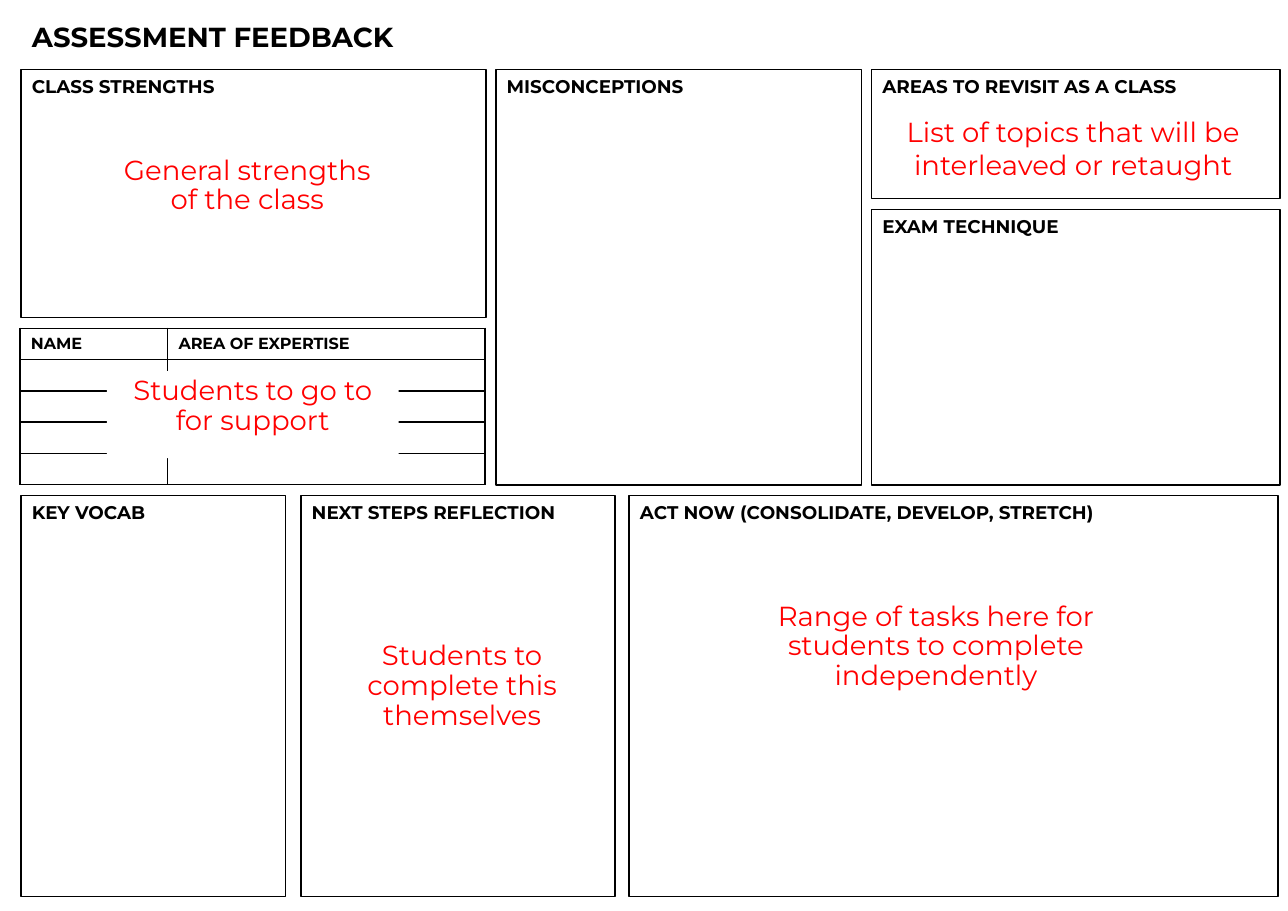
from dataclasses import dataclass

import lxml.etree
import pptx
import pptx.dml.color
import pptx.enum.shapes
import pptx.enum.text
import pptx.oxml.ns
import pptx.util

Pt = pptx.util.Pt
Align = pptx.enum.text.PP_ALIGN
Anchor = pptx.enum.text.MSO_ANCHOR


@dataclass(frozen=True)
class Theme:
    font: str = "Montserrat"
    ink: str = "000000"
    paper: str = "FFFFFF"
    prompt: str = "FF0000"
    title_size: float = 18
    heading_size: float = 12
    table_size: float = 10.5
    prompt_size: float = 18
    line_width: float = 1


@dataclass(frozen=True)
class Panel:
    heading: str
    left: float
    top: float
    width: float
    height: float


@dataclass(frozen=True)
class Prompt:
    text: str
    left: float
    top: float
    width: float
    height: float
    filled: bool = False
    line_spacing: float = 0.9
    space_before: float = 11
    inset_x: float = 7.2
    inset_y: float = 3.6


THEME = Theme()
LEFT, TOP, LOWER_TOP, LOWER_HEIGHT = 13.7, 45.5, 324, 262
MIDDLE_BOTTOM = 317
RIGHT_LEFT, RIGHT_WIDTH, EXAM_TOP = 569.5, 267, 136.8

PANELS = [
    Panel("CLASS STRENGTHS", LEFT, TOP, 303.8, 162.2),
    Panel("AREAS TO REVISIT AS A CLASS", RIGHT_LEFT, TOP, RIGHT_WIDTH, 84.2),
    Panel("MISCONCEPTIONS", 324, TOP, 239, MIDDLE_BOTTOM - TOP),
    Panel("EXAM TECHNIQUE", RIGHT_LEFT, EXAM_TOP, RIGHT_WIDTH, MIDDLE_BOTTOM - EXAM_TOP),
    Panel("KEY VOCAB", LEFT, LOWER_TOP, 172.8, LOWER_HEIGHT),
    Panel("NEXT STEPS REFLECTION", 196.6, LOWER_TOP, 205.2, LOWER_HEIGHT),
    Panel("ACT NOW (CONSOLIDATE, DEVELOP, STRETCH)", 411.1, LOWER_TOP, 424.1, LOWER_HEIGHT),
]
PROMPTS = [
    Prompt("Range of tasks here for students to complete independently", 486, 390.2, 251.3, 115.2),
    Prompt("List of topics that will be interleaved or retaught", 581.8, 70.6, 239, 33.8,
           line_spacing=1, space_before=3.6, inset_x=7.9, inset_y=4.3),
    Prompt("Students to complete this themselves", 206.6, 416.2, 190.8, 115.2),
    Prompt("Students to go to for support", 69.8, 242.6, 190.8, 56.9, filled=True),
    Prompt("General strengths of the class", 66.2, 98.6, 190.8, 56.9, filled=True),
]
EXPERT_HEADINGS = ("NAME", "AREA OF EXPERTISE")
EXPERT_COLUMNS = (96.5, 207.4)
EXPERT_ROWS, EXPERT_ROW_HEIGHT = 5, 20.45


def rgb(value: str) -> pptx.dml.color.RGBColor:
    return pptx.dml.color.RGBColor.from_string(value)


def write(frame, text: str, size: float, color: str, bold: bool = False,
          align=Align.LEFT, anchor=Anchor.TOP):
    """Put one styled paragraph into a text frame and return it."""
    frame.word_wrap = True
    frame.vertical_anchor = anchor
    para = frame.paragraphs[0]
    para.text = text
    para.alignment = align
    style(para.font, size, color, bold)
    return para


def style(font, size: float, color: str, bold: bool) -> None:
    font.name, font.size, font.bold = THEME.font, Pt(size), bold
    font.color.rgb = rgb(color)


def add_box(page, item, filled: bool, outlined: bool):
    """Draw a plain rectangle for a panel or a prompt."""
    box = page.shapes.add_shape(
        pptx.enum.shapes.MSO_SHAPE.RECTANGLE,
        Pt(item.left), Pt(item.top), Pt(item.width), Pt(item.height))
    box.shadow.inherit = False
    if filled:
        box.fill.solid()
        box.fill.fore_color.rgb = rgb(THEME.paper)
    else:
        box.fill.background()
    if outlined:
        box.line.color.rgb = rgb(THEME.ink)
        box.line.width = Pt(THEME.line_width)
    else:
        box.line.fill.background()
    return box


def add_title(page, text: str) -> None:
    title = page.shapes.title
    title.left, title.top, title.width, title.height = Pt(LEFT), Pt(9.4), Pt(821.5), Pt(28.8)
    write(title.text_frame, text, THEME.title_size, THEME.ink, bold=True)
    title.text_frame.auto_size = pptx.enum.text.MSO_AUTO_SIZE.NONE


def add_panel(page, panel: Panel) -> None:
    box = add_box(page, panel, filled=True, outlined=True)
    write(box.text_frame, panel.heading, THEME.heading_size, THEME.ink, bold=True)


def add_prompt(page, prompt: Prompt) -> None:
    box = add_box(page, prompt, prompt.filled, outlined=False)
    frame = box.text_frame
    frame.margin_left = frame.margin_right = Pt(prompt.inset_x)
    frame.margin_top = frame.margin_bottom = Pt(prompt.inset_y)
    para = write(frame, prompt.text, THEME.prompt_size, THEME.prompt, align=Align.CENTER)
    para.line_spacing = prompt.line_spacing
    para.space_before = Pt(prompt.space_before)


def add_borders(cell) -> None:
    """Outline all four sides; borders come before the fill in tcPr."""
    qn = pptx.oxml.ns.qn
    properties = cell._tc.get_or_add_tcPr()
    for position, side in enumerate(("lnL", "lnR", "lnT", "lnB")):
        line = lxml.etree.Element(qn(f"a:{side}"), w=str(Pt(THEME.line_width)))
        fill = lxml.etree.SubElement(line, qn("a:solidFill"))
        lxml.etree.SubElement(fill, qn("a:srgbClr"), val=THEME.ink)
        properties.insert(position, line)


def add_expert_table(page) -> None:
    table = page.shapes.add_table(
        EXPERT_ROWS, len(EXPERT_COLUMNS), Pt(13), Pt(214.6),
        Pt(sum(EXPERT_COLUMNS)), Pt(EXPERT_ROWS * EXPERT_ROW_HEIGHT)).table
    table.first_row = table.horz_banding = False
    for column, width in zip(table.columns, EXPERT_COLUMNS):
        column.width = Pt(width)
    for row in table.rows:
        row.height = Pt(EXPERT_ROW_HEIGHT)
    for cell in table.iter_cells():
        cell.fill.solid()
        cell.fill.fore_color.rgb = rgb(THEME.paper)
        add_borders(cell)
        # An empty paragraph takes its height from its end mark
        lxml.etree.SubElement(cell.text_frame.paragraphs[0]._p,
                              pptx.oxml.ns.qn("a:endParaRPr"),
                              sz=str(round(THEME.table_size * 100)))
    for column, heading in enumerate(EXPERT_HEADINGS):
        cell = table.cell(0, column)
        write(cell.text_frame, heading, THEME.table_size, THEME.ink, bold=True)


def main() -> None:
    deck = pptx.Presentation()
    deck.slide_width, deck.slide_height = Pt(841.68), Pt(595.44)
    page = deck.slides.add_slide(deck.slide_layouts[5])  # Title Only

    # Title and framed panels
    add_title(page, "ASSESSMENT FEEDBACK")
    for panel in PANELS:
        add_panel(page, panel)

    # Table of student experts
    add_expert_table(page)

    # Red guidance on top
    for prompt in PROMPTS:
        add_prompt(page, prompt)

    deck.save("out.pptx")


if __name__ == "__main__":
    main()
